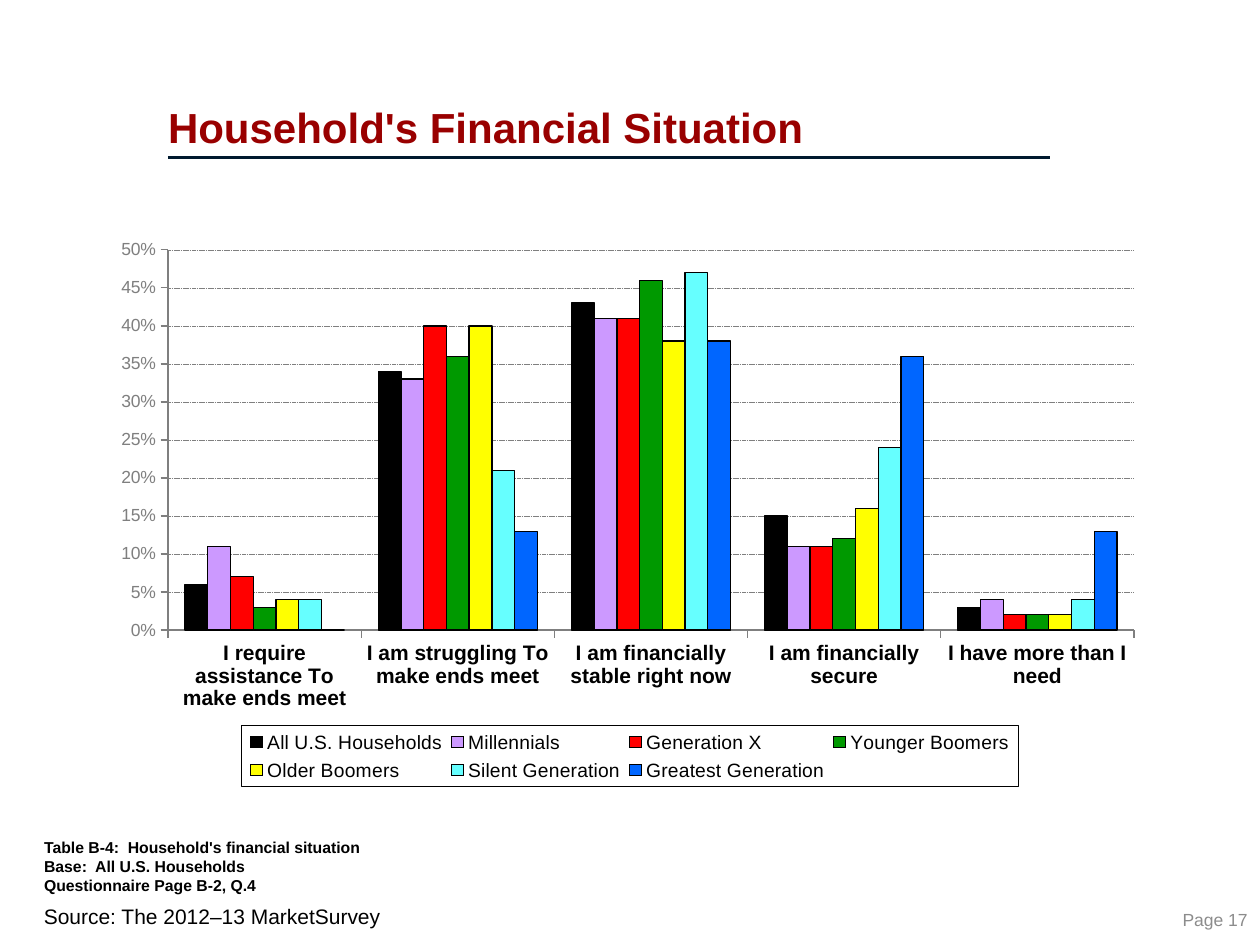
from lxml.etree import SubElement
from pptx import Presentation
from pptx.chart.data import CategoryChartData
from pptx.dml.color import RGBColor
from pptx.enum.chart import XL_CHART_TYPE, XL_LEGEND_POSITION, XL_TICK_MARK
from pptx.enum.dml import MSO_LINE
from pptx.enum.shapes import MSO_CONNECTOR
from pptx.enum.text import MSO_ANCHOR, MSO_AUTO_SIZE, PP_ALIGN
from pptx.oxml.ns import qn
from pptx.util import Pt

FONT = "Arial"
BLACK, GRAY = "000000", "7F7F7F"

CATEGORIES = [
    "I require assistance To make ends meet",
    "I am struggling To make ends meet",
    "I am financially stable right now",
    "I am financially secure",
    "I have more than I need",
]
GENERATIONS = [
    ("All U.S. Households", "000000", (0.06, 0.34, 0.43, 0.15, 0.03)),
    ("Millennials", "CC99FF", (0.11, 0.33, 0.41, 0.11, 0.04)),
    ("Generation X", "FF0000", (0.07, 0.40, 0.41, 0.11, 0.02)),
    ("Younger Boomers", "009900", (0.03, 0.36, 0.46, 0.12, 0.02)),
    ("Older Boomers", "FFFF00", (0.04, 0.40, 0.38, 0.16, 0.02)),
    ("Silent Generation", "66FFFF", (0.04, 0.21, 0.47, 0.24, 0.04)),
    ("Greatest Generation", "0066FF", (0, 0.13, 0.38, 0.36, 0.13)),
]


def rgb(color):
    return RGBColor.from_string(color)


def set_font(font, size, color=BLACK, bold=False):
    font.name, font.size, font.bold = FONT, Pt(size), bold
    font.color.rgb = rgb(color)


def set_line(line, color, width):
    line.color.rgb = rgb(color)
    line.width = Pt(width)


def set_layout(element, x, y, w, h, inner=False):
    """Place a plot area or legend by fractions of the chart's size."""
    layout = element.find(qn("c:layout"))
    if layout is None:
        layout = SubElement(element, qn("c:layout"))
        pos = element.find(qn("c:legendPos"))
        if pos is None:
            element.insert(0, layout)
        else:
            pos.addnext(layout)
    manual = SubElement(layout, qn("c:manualLayout"))
    values = [("layoutTarget", "inner")] if inner else []
    values += [("xMode", "edge"), ("yMode", "edge"),
               ("x", x), ("y", y), ("w", w), ("h", h)]
    for tag, value in values:
        SubElement(manual, qn(f"c:{tag}")).set("val", str(value))


class SlideBuilder:
    """Holds the slide and draws each kind of element in its style."""

    def __init__(self, prs):
        self.s = prs.slides.add_slide(prs.slide_layouts[5])

    def title(self, text, x, y, w, h):
        sp = self.s.shapes.title
        sp.left, sp.top, sp.width, sp.height = map(Pt, (x, y, w, h))
        tf = sp.text_frame
        tf.auto_size = MSO_AUTO_SIZE.NONE
        tf.vertical_anchor = MSO_ANCHOR.BOTTOM
        tf.margin_left = tf.margin_right = 0
        p = tf.paragraphs[0]
        p.alignment, p.line_spacing = PP_ALIGN.LEFT, 0.8
        r = p.add_run()
        r.text = text
        set_font(r.font, 24, "990000", True)

    def rule(self, x1, x2, y):
        sp = self.s.shapes.add_connector(
            MSO_CONNECTOR.STRAIGHT, Pt(x1), Pt(y), Pt(x2), Pt(y))
        set_line(sp.line, "00192F", 2)
        SubElement(sp._element.spPr, qn("a:effectLst"))

    def text(self, lines, x, y, w, h, size, color=BLACK, bold=False,
             align=PP_ALIGN.LEFT, anchor=MSO_ANCHOR.TOP, wrap=True,
             margins=(7.2, 3.6, 7.2, 3.6)):
        tf = self.s.shapes.add_textbox(Pt(x), Pt(y), Pt(w), Pt(h)).text_frame
        tf.word_wrap, tf.vertical_anchor = wrap, anchor
        (tf.margin_left, tf.margin_top,
         tf.margin_right, tf.margin_bottom) = map(Pt, margins)
        p = tf.paragraphs[0]
        p.alignment = align
        for i, line in enumerate(lines):
            if i:
                p.add_line_break()
            r = p.add_run()
            r.text = line
            set_font(r.font, size, color, bold)

    def column_chart(self, categories, series, x, y, w, h):
        data = CategoryChartData(number_format="0%")
        data.categories = categories
        for name, _, values in series:
            data.add_series(name, values)
        chart = self.s.shapes.add_chart(
            XL_CHART_TYPE.COLUMN_CLUSTERED, Pt(x), Pt(y), Pt(w), Pt(h), data).chart
        chart.has_title = False
        set_font(chart.font, 10)

        plot = chart.plots[0]
        plot.gap_width, plot.overlap, plot.vary_by_categories = 150, 0, False
        for ser, (_, color, _) in zip(plot.series, series):
            ser.format.fill.solid()
            ser.format.fill.fore_color.rgb = rgb(color)
            set_line(ser.format.line, BLACK, 0.75)

        for axis in (chart.category_axis, chart.value_axis):
            axis.major_tick_mark = XL_TICK_MARK.OUTSIDE
            set_line(axis.format.line, GRAY, 0.75)
        set_font(chart.category_axis.tick_labels.font, 12, bold=True)
        axis = chart.value_axis
        axis.minimum_scale, axis.maximum_scale, axis.major_unit = 0, 0.5, 0.05
        axis.tick_labels.number_format = "0%"
        axis.tick_labels.number_format_is_linked = False
        set_font(axis.tick_labels.font, 10, GRAY)
        grid = axis.major_gridlines.format.line
        set_line(grid, GRAY, 0.25)
        grid.dash_style = MSO_LINE.SQUARE_DOT

        chart.has_legend = True
        legend = chart.legend
        legend.position, legend.include_in_layout = XL_LEGEND_POSITION.BOTTOM, False
        set_font(legend.font, 11)
        box = legend._element
        border = box.makeelement(qn("c:spPr"), {})
        box.find(qn("c:txPr")).addprevious(border)
        line = SubElement(border, qn("a:ln"), w=str(Pt(0.75)))
        fill = SubElement(line, qn("a:solidFill"))
        SubElement(fill, qn("a:srgbClr"), val=BLACK)
        set_layout(box, 0.13, 0.89, 0.74, 0.11)
        set_layout(chart._chartSpace.chart.plotArea, 0.06, 0.04, 0.92, 0.68, inner=True)


def main():
    prs = Presentation()
    prs.slide_width, prs.slide_height = Pt(720), Pt(540)
    b = SlideBuilder(prs)
    b.text(["Source: The 2012–13 MarketSurvey"], 18, 512.6, 618, 21.6, 12)
    b.rule(96, 600, 90)
    b.title("Household's Financial Situation", 96, 6, 516, 84)
    b.column_chart(CATEGORIES, GENERATIONS, 60, 130, 600, 320)
    b.text(["Page 17"], 666.7, 515.5, 53.3, 19.4, 10, "8C8C8C",
           align=PP_ALIGN.RIGHT, anchor=MSO_ANCHOR.MIDDLE, wrap=False)
    b.text(["Table B-4:  Household's financial situation",
            "Base:  All U.S. Households",
            "Questionnaire Page B-2, Q.4"],
           0, 462.2, 505.4, 58.3, 9, bold=True, anchor=MSO_ANCHOR.BOTTOM,
           wrap=False, margins=(25.2, 9.4, 0, 9.4))
    prs.save("out.pptx")


if __name__ == "__main__":
    main()
